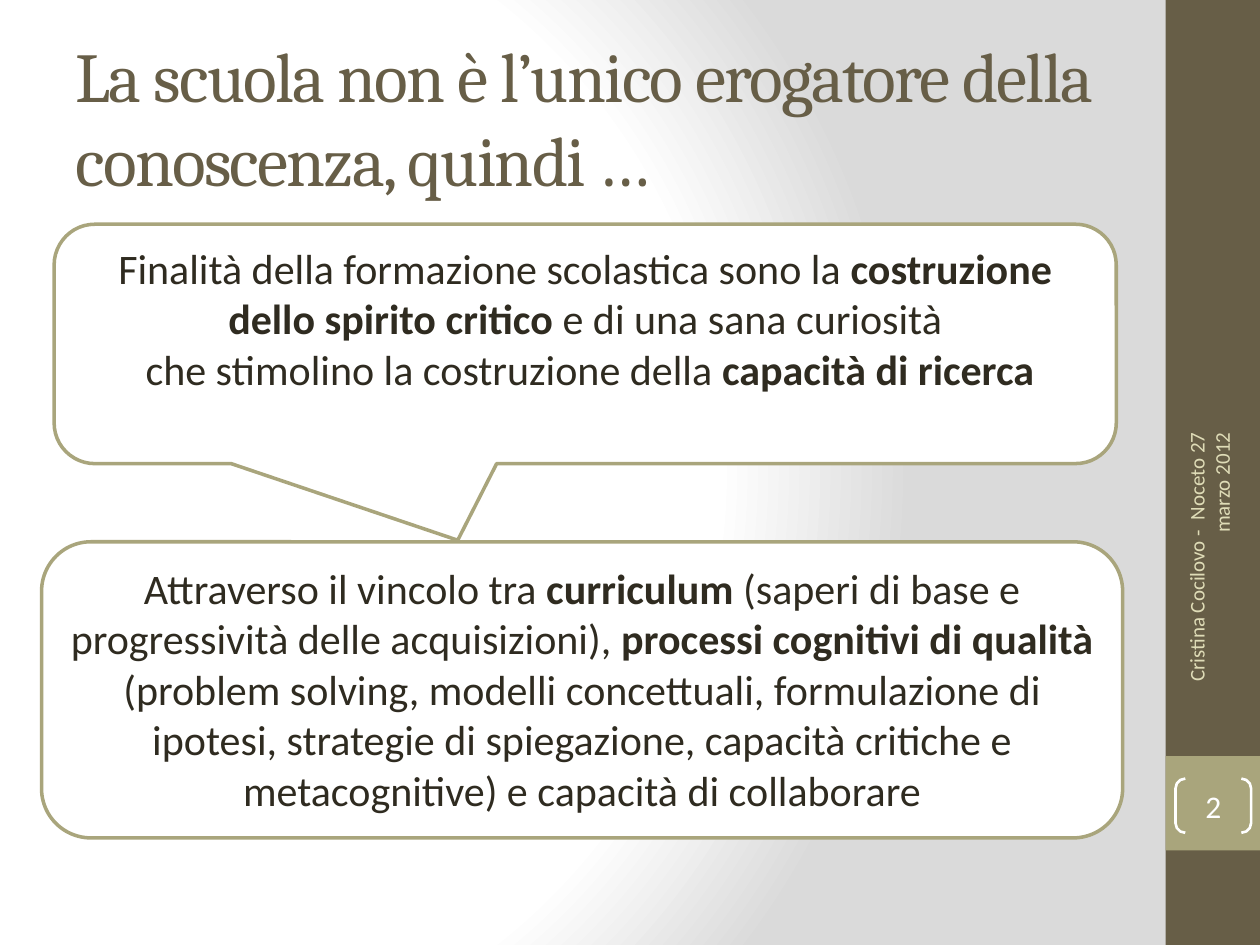
import pptx
import pptx.dml.color
import pptx.enum.shapes
import pptx.enum.text
import pptx.oxml
import pptx.oxml.ns
import pptx.util

Inches = pptx.util.Inches
SHAPE = pptx.enum.shapes.MSO_SHAPE
ALIGN = pptx.enum.text.PP_ALIGN
ANCHOR = pptx.enum.text.MSO_ANCHOR

BROWN, OLIVE, SAND, INK, WHITE = "675E47", "A9A57C", "DFDCB7", "2F2B20", "FFFFFF"
BACKGROUND_STOPS = [(0, WHITE), (75, WHITE), (100, "DADADA")]


def color(hex_code):
    return pptx.dml.color.RGBColor.from_string(hex_code)


def set_background(slide):
    """Circular gradient spreading from the left half of the slide."""
    stops = "".join(
        f'<a:gs pos="{pos * 1000}"><a:srgbClr val="{hex_code}"/></a:gs>'
        for pos, hex_code in BACKGROUND_STOPS
    )
    background = pptx.oxml.parse_xml(
        f'<p:bg {pptx.oxml.ns.nsdecls("p", "a")}><p:bgPr>'
        f'<a:gradFill rotWithShape="1"><a:gsLst>{stops}</a:gsLst>'
        '<a:path path="circle">'
        '<a:fillToRect l="20000" t="50000" r="100000" b="50000"/></a:path>'
        "</a:gradFill><a:effectLst/></p:bgPr></p:bg>"
    )
    slide.element.cSld.insert(0, background)


def write(frame, paragraphs, size, hex_code, align, anchor, font="Calibri"):
    """Fill a frame; each paragraph is a list of (text, bold) runs."""
    for name, value in {"word_wrap": True, "vertical_anchor": anchor}.items():
        setattr(frame, name, value)
    for index, runs in enumerate(paragraphs):
        paragraph = frame.add_paragraph() if index else frame.paragraphs[0]
        paragraph.alignment = align
        for text, bold in runs:
            run = paragraph.add_run()
            run.text = text
            style = {"name": font, "size": pptx.util.Pt(size), "bold": bold}
            for name, value in style.items():
                setattr(run.font, name, value)
            run.font.color.rgb = color(hex_code)


def add_box(slide, kind, box, fill=None, line=None, width=2, adjustments=()):
    shape = slide.shapes.add_shape(kind, *map(Inches, box))
    shape.shadow.inherit = False
    if fill:
        shape.fill.solid()
        shape.fill.fore_color.rgb = color(fill)
    else:
        shape.fill.background()
    if line:
        shape.line.color.rgb = color(line)
        shape.line.width = pptx.util.Pt(width)
    else:
        shape.line.fill.background()
    for index, value in enumerate(adjustments):
        shape.adjustments[index] = value
    return shape


def add_title(slide, box, text):
    title = slide.shapes.title
    for name, value in zip(("left", "top", "width", "height"), box):
        setattr(title, name, Inches(value))
    write(title.text_frame, [[(text, False)]], 40, BROWN, ALIGN.LEFT,
          ANCHOR.MIDDLE, "Cambria")
    title.text_frame.auto_size = pptx.enum.text.MSO_AUTO_SIZE.NONE
    for run in title.text_frame.paragraphs[0].runs:
        run.font._element.set("spc", "-100")


def add_sidebar(slide, box, footer, number):
    """Brown band with a rotated footer and a bracketed slide number."""
    left, top, width, height = box
    add_box(slide, SHAPE.RECTANGLE, box, BROWN)
    add_box(slide, SHAPE.RECTANGLE, (left, top + 6, width, width), OLIVE)

    footer_box = slide.shapes.add_textbox(
        Inches(left - 0.95), Inches(top + 4.43), Inches(2.59), Inches(0.4))
    footer_box.rotation = 270
    write(footer_box.text_frame, [[(footer, False)]], 12, SAND, ALIGN.RIGHT,
          ANCHOR.MIDDLE)

    bracket = add_box(slide, SHAPE.DOUBLE_BRACKET,
                      (left + 0.08, top + 6.18, 0.6, 0.43),
                      line=WHITE, width=1.5, adjustments=[0.18])
    for side in ("left", "top", "right", "bottom"):
        setattr(bracket.text_frame, f"margin_{side}", 0)
    write(bracket.text_frame, [[(number, False)]], 18, WHITE, ALIGN.CENTER,
          ANCHOR.MIDDLE)


def add_statement(slide, kind, box, paragraphs, adjustments=()):
    statement = add_box(slide, kind, box, WHITE, OLIVE, adjustments=adjustments)
    write(statement.text_frame, paragraphs, 24, INK, ALIGN.CENTER, ANCHOR.TOP)


def main():
    deck = pptx.Presentation()
    deck.slide_width, deck.slide_height = Inches(10), Inches(7.5)
    slide = deck.slides.add_slide(deck.slide_layouts.get_by_name("Title Only"))
    set_background(slide)
    add_sidebar(slide, (9.25, 0, 0.75, 7.5),
                "Cristina Cocilovo -  Noceto 27 marzo 2012", "2")
    add_title(slide, (0.5, 0.3, 8.33, 1.25),
              "La scuola non è l’unico erogatore della conoscenza, quindi …")

    purpose = [
        [("Finalità della formazione scolastica sono la ", False),
         ("costruzione dello spirito critico ", True),
         ("e di una sana curiosità", False)],
        [(" che stimolino la costruzione della", False),
         (" capacità di ricerca", True)],
    ]
    means = [
        [("Attraverso il vincolo tra ", False),
         ("curriculum", True),
         (" (saperi di base e progressività delle acquisizioni), ", False),
         ("processi cognitivi di qualità ", True),
         ("(problem solving, modelli concettuali, formulazione di ipotesi, "
          "strategie di spiegazione, capacità critiche e metacognitive) "
          "e capacità di collaborare", False)],
    ]
    add_statement(slide, SHAPE.ROUNDED_RECTANGULAR_CALLOUT,
                  (0.43, 1.78, 8.43, 1.9), purpose, [-0.12, 0.82, 0.17])
    add_statement(slide, SHAPE.FLOWCHART_ALTERNATE_PROCESS,
                  (0.33, 4.3, 8.58, 2.35), means)
    deck.save("out.pptx")


if __name__ == "__main__":
    main()
